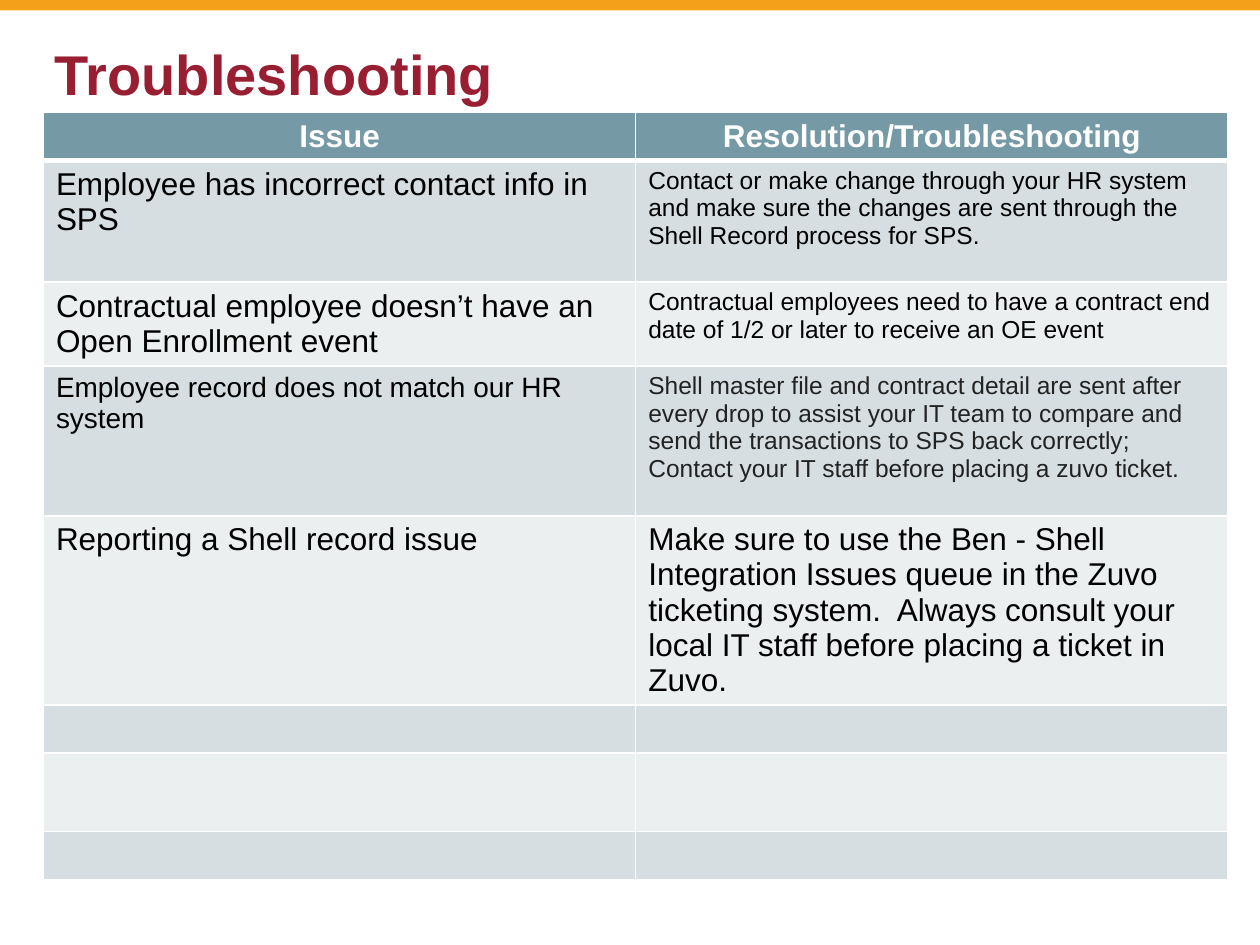
import pptx
import pptx.dml.color
import pptx.enum.shapes
import pptx.enum.text
import pptx.oxml
import pptx.oxml.ns
import pptx.util

Pt = pptx.util.Pt
RGB = pptx.dml.color.RGBColor.from_string

THEME = {
    "font": "Arial",
    "accent": "F5A01A",
    "title": "981E32",
    "header": "759AA5",
    "bands": ("D6DEE1", "ECEFF0"),
    "light": "FFFFFF",
    "dark": "000000",
    "soft": "222222",
    "title_size": 32,
    "large": 18,
    "medium": 16,
    "small": 14,
}

TITLE = "Troubleshooting"
HEADERS = ("Issue", "Resolution/Troubleshooting")
ROWS = [
    (("Employee has incorrect contact info in SPS", "large", "dark"),
     ("Contact or make change through your HR system and make sure the changes "
      "are sent through the Shell Record process for SPS.", "small", "dark")),
    (("Contractual employee doesn’t have an Open Enrollment event", "large", "dark"),
     ("Contractual employees need to have a contract end date of 1/2 or later "
      "to receive an OE event", "small", "dark")),
    (("Employee record does not match our HR system", "medium", "dark"),
     ("Shell master file and contract detail are sent after every drop to assist "
      "your IT team to compare and send the transactions to SPS back correctly;  "
      "Contact your IT staff before placing a zuvo ticket.", "small", "soft")),
    (("Reporting a Shell record issue", "large", "dark"),
     ("Make sure to use the Ben - Shell Integration Issues queue in the Zuvo "
      "ticketing system.  Always consult your local IT staff before placing a "
      "ticket in Zuvo.", "large", "dark")),
] + [(("", "large", "dark"),) * 2] * 3
ROW_HEIGHTS = (27, 69.5, 48, 85.5, 108, 27.5, 45, 27)
TABLE_LEFT, TABLE_TOP, TABLE_WIDTH = 24.8, 64.4, 677


def style(p, size, color, bold=False):
    p.font.name = THEME["font"]
    p.font.size = Pt(THEME[size])
    p.font.bold = bold
    p.font.color.rgb = RGB(THEME[color])


def set_borders(cell, bottom, top):
    tc_pr = cell._tc.get_or_add_tcPr()
    for side, width in (("L", 1), ("R", 1), ("T", top), ("B", bottom)):
        tc_pr.append(pptx.oxml.parse_xml(
            f'<a:ln{side} {pptx.oxml.ns.nsdecls("a")} w="{Pt(width)}"><a:solidFill>'
            f'<a:srgbClr val="{THEME["light"]}"/></a:solidFill></a:ln{side}>'))


def fill_cell(cell, text, size, color, fill, header=False, top=1):
    set_borders(cell, 3 if header else 1, top)
    cell.fill.solid()
    cell.fill.fore_color.rgb = RGB(fill)
    p = cell.text_frame.paragraphs[0]
    if text:
        p.text = text
    style(p, size, color, header)
    if header:
        p.alignment = pptx.enum.text.PP_ALIGN.CENTER


def add_bar(slide, width):
    sp = slide.shapes.add_shape(
        pptx.enum.shapes.MSO_SHAPE.RECTANGLE, 0, 0, width, Pt(6))
    sp.shadow.inherit = False
    sp.fill.solid()
    sp.fill.fore_color.rgb = RGB(THEME["accent"])
    sp.line.fill.background()


def add_title(slide):
    sp = slide.shapes.title
    sp.left, sp.top, sp.width, sp.height = Pt(24), Pt(18), Pt(678), Pt(48)
    tf = sp.text_frame
    tf.text = TITLE
    tf.word_wrap = True
    tf.auto_size = pptx.enum.text.MSO_AUTO_SIZE.NONE
    tf.vertical_anchor = pptx.enum.text.MSO_ANCHOR.MIDDLE
    p = tf.paragraphs[0]
    p.alignment = pptx.enum.text.PP_ALIGN.LEFT
    style(p, "title_size", "title", True)


def add_issue_table(slide):
    table = slide.shapes.add_table(
        len(ROW_HEIGHTS), len(HEADERS), Pt(TABLE_LEFT), Pt(TABLE_TOP),
        Pt(TABLE_WIDTH), Pt(sum(ROW_HEIGHTS))).table
    for row, height in zip(table.rows, ROW_HEIGHTS):
        row.height = Pt(height)
    for c, text in enumerate(HEADERS):
        fill_cell(table.cell(0, c), text, "large", "light", THEME["header"], True)
    for r, row in enumerate(ROWS):
        for c, (text, size, color) in enumerate(row):
            fill_cell(table.cell(r + 1, c), text, size, color,
                      THEME["bands"][r % 2], top=1 if r else 3)


def main():
    prs = pptx.Presentation()
    prs.slide_width, prs.slide_height = Pt(720), Pt(540)
    slide = prs.slides.add_slide(prs.slide_layouts[5])
    add_bar(slide, prs.slide_width)
    add_title(slide)
    add_issue_table(slide)
    prs.save("out.pptx")


if __name__ == "__main__":
    main()
